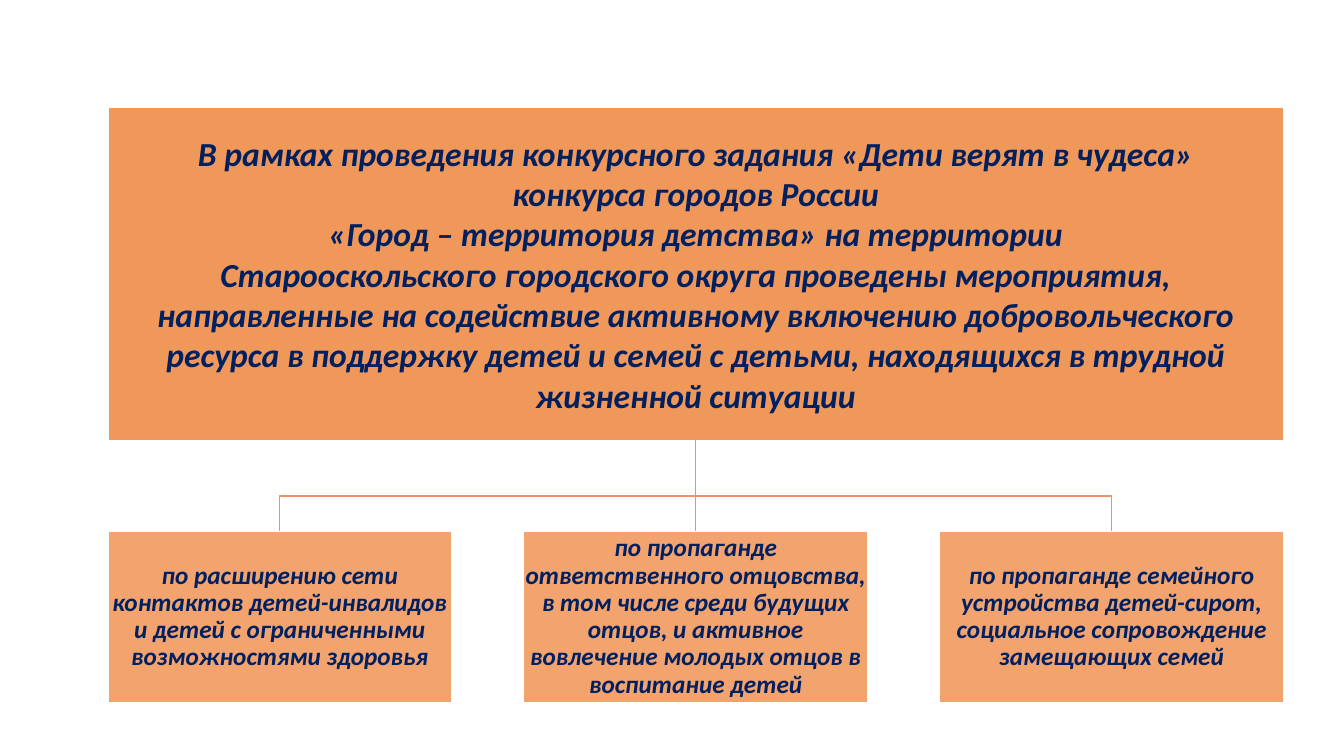
import lxml.etree
import pptx
import pptx.dml.color
import pptx.enum.shapes
import pptx.enum.text
import pptx.oxml.ns
import pptx.util

COLOURS = {"box": "ED7D31", "border": "FFFFFF", "branch": "EF9166", "text": "002060"}
FONT = "Calibri"
PAGE_WIDTH, PAGE_HEIGHT = 13.33, 7.5

# Grid in inches
LEFT, GOAL_WIDTH, TASK_WIDTH = 1.07, 11.66, 3.41
GOAL_TOP, GOAL_HEIGHT = 1.06, 3.31
TASK_TOP, TASK_HEIGHT = 5.27, 1.7
FORK_Y = 4.92

GOAL = [
    "В рамках проведения конкурсного задания «Дети верят в чудеса»",
    "конкурса городов России",
    "«Город – территория детства» на территории",
    "Старооскольского городского округа проведены мероприятия, направленные на "
    "содействие активному включению добровольческого ресурса в поддержку детей и "
    "семей с детьми, находящихся в трудной жизненной ситуации",
]
TASKS = [
    "по расширению сети контактов детей-инвалидов и детей с ограниченными "
    "возможностями здоровья",
    "по пропаганде ответственного отцовства, в том числе среди будущих отцов, "
    "и активное вовлечение молодых отцов в воспитание детей",
    "по пропаганде семейного устройства детей-сирот, социальное сопровождение "
    "замещающих семей",
]


def colour(name):
    return pptx.dml.color.RGBColor.from_string(COLOURS[name])


def set_line(shape, name):
    shape.line.color.rgb = colour(name)
    shape.line.width = pptx.util.Pt(1)


def set_opacity(shape, percent):
    tag = pptx.oxml.ns.qn("a:srgbClr")
    fill = shape.element.spPr.find(pptx.oxml.ns.qn("a:solidFill"))
    alpha = lxml.etree.SubElement(fill.find(tag), pptx.oxml.ns.qn("a:alpha"))
    alpha.set("val", str(percent * 1000))


def add_box(page, area, lines, size, opacity, inset, spacing=1.0):
    """Add a tinted rectangle with one centred paragraph for each line."""
    box = page.shapes.add_shape(
        pptx.enum.shapes.MSO_SHAPE.RECTANGLE, *map(pptx.util.Inches, area))
    box.fill.solid()
    box.fill.fore_color.rgb = colour("box")
    set_opacity(box, opacity)
    set_line(box, "border")
    box.shadow.inherit = False

    frame = box.text_frame
    frame.word_wrap = True
    frame.vertical_anchor = pptx.enum.text.MSO_ANCHOR.MIDDLE
    frame.margin_left = frame.margin_right = pptx.util.Inches(inset)
    frame.margin_top = frame.margin_bottom = pptx.util.Inches(inset)
    frame.text = "\n".join(lines)
    for para in frame.paragraphs:
        para.alignment = pptx.enum.text.PP_ALIGN.CENTER
        para.line_spacing = spacing
        for span in para.runs:
            span.font.name = FONT
            span.font.size = pptx.util.Pt(size)
            span.font.bold = span.font.italic = True
            span.font.color.rgb = colour("text")
    return box


def add_trunk(page, goal, task):
    """Join the goal straight down to the task below its middle."""
    trunk = page.shapes.add_connector(
        pptx.enum.shapes.MSO_CONNECTOR.STRAIGHT, 0, 0, 0, 0)
    trunk.begin_connect(goal, 2)
    trunk.end_connect(task, 0)
    set_line(trunk, "branch")
    lxml.etree.SubElement(trunk.element.spPr, pptx.oxml.ns.qn("a:effectLst"))


def add_branch(page, goal, task):
    """Draw the elbow line from the goal down to the middle of a side task."""
    start_x = goal.left + goal.width // 2
    task_x = task.left + task.width // 2
    fork_y = pptx.util.Inches(FORK_Y)
    builder = page.shapes.build_freeform(start_x, goal.top + goal.height)
    builder.add_line_segments(
        [(start_x, fork_y), (task_x, fork_y), (task_x, task.top)], close=False)
    branch = builder.convert_to_shape()
    branch.fill.background()
    set_line(branch, "branch")
    branch.shadow.inherit = False


def main():
    deck = pptx.Presentation()
    deck.slide_width = pptx.util.Inches(PAGE_WIDTH)
    deck.slide_height = pptx.util.Inches(PAGE_HEIGHT)
    page = deck.slides.add_slide(deck.slide_layouts[6])

    goal = add_box(page, (LEFT, GOAL_TOP, GOAL_WIDTH, GOAL_HEIGHT), GOAL,
                   size=24, opacity=80, inset=0.02)
    step = (GOAL_WIDTH - TASK_WIDTH) / (len(TASKS) - 1)
    first, middle, last = [
        add_box(page, (LEFT + i * step, TASK_TOP, TASK_WIDTH, TASK_HEIGHT), [task],
                size=18, opacity=70, inset=0.01, spacing=0.9)
        for i, task in enumerate(TASKS)]
    add_trunk(page, goal, middle)
    for side in (first, last):
        add_branch(page, goal, side)
    deck.save("out.pptx")


if __name__ == "__main__":
    main()
